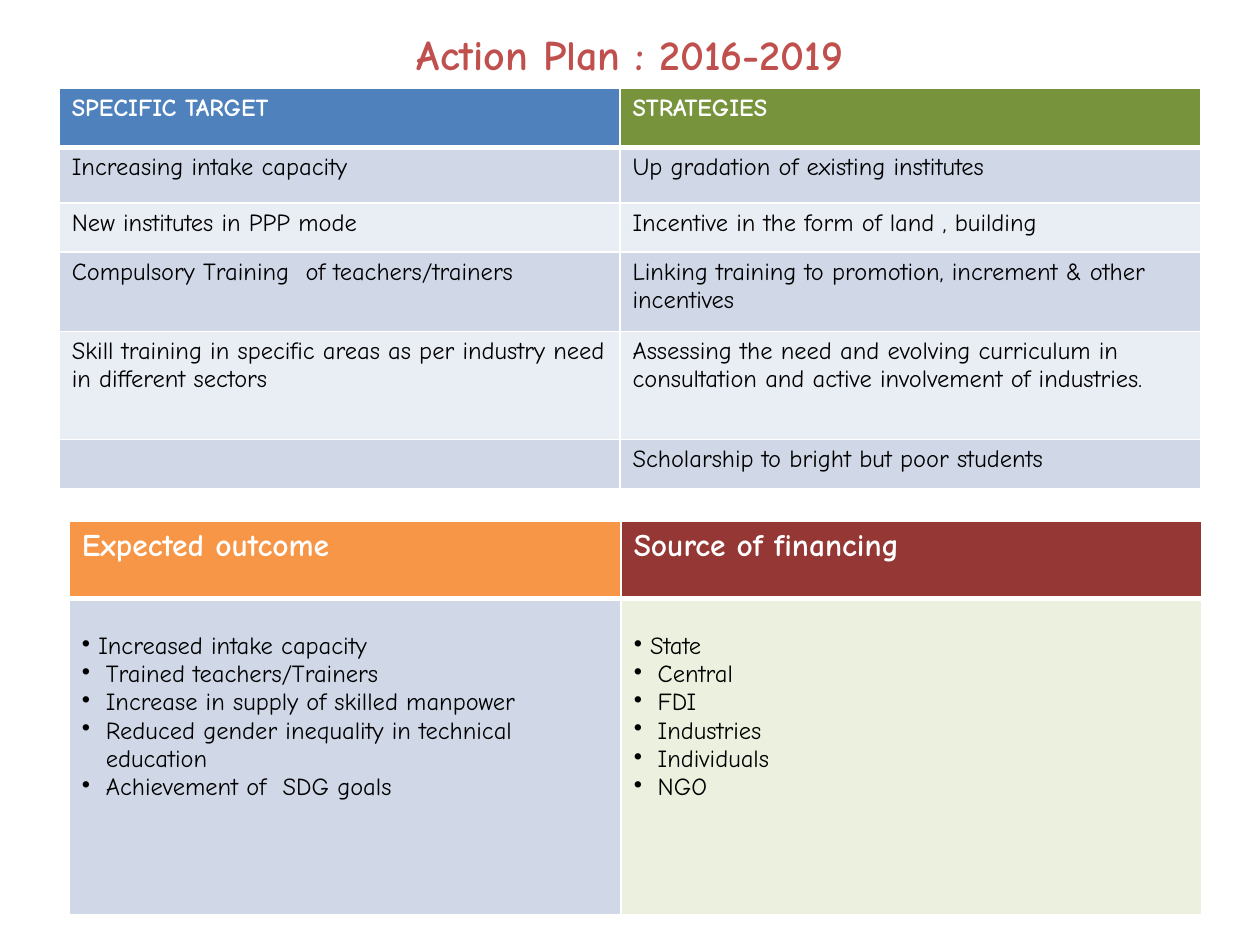
"""Build the Action Plan 2016-2019 slide with its two tables."""
from lxml import etree
from pptx import Presentation
from pptx.dml.color import RGBColor
from pptx.enum.text import MSO_ANCHOR, PP_ALIGN
from pptx.oxml.ns import qn
from pptx.util import Inches, Pt

CENTER = PP_ALIGN.CENTER
MIDDLE = MSO_ANCHOR.MIDDLE
FONT = "Comic Neue"
WHITE = RGBColor(0xFF, 0xFF, 0xFF)
BLACK = RGBColor(0, 0, 0)
RED = RGBColor(0xC0, 0x50, 0x4D)
BLUE = RGBColor(0x4F, 0x81, 0xBD)
GREEN = RGBColor(0x77, 0x93, 0x3C)
ORANGE = RGBColor(0xF7, 0x96, 0x46)
MAROON = RGBColor(0x95, 0x37, 0x35)
BAND_DARK = RGBColor(0xD0, 0xD8, 0xE8)
BAND_LIGHT = RGBColor(0xE9, 0xED, 0xF4)
PALE_GREEN = RGBColor(0xEB, 0xF1, 0xDE)

TITLE = "Action Plan : 2016-2019"
TARGETS = [
    ("SPECIFIC TARGET", "STRATEGIES"),
    ("Increasing intake capacity", "Up gradation of existing institutes"),
    ("New institutes in PPP mode", "Incentive in the form of land , building"),
    ("Compulsory Training  of teachers/trainers",
     "Linking training to promotion, increment & other incentives"),
    ("Skill training in specific areas as per industry need in different sectors",
     "Assessing the need and evolving curriculum in consultation and active "
     "involvement of industries."),
    ("", "Scholarship to bright but poor students"),
]
OUTCOME_HEADERS = ("Expected outcome", "Source of financing")
OUTCOMES = [
    "Increased intake capacity",
    "Trained teachers/Trainers",
    "Increase in supply of skilled manpower",
    "Reduced gender inequality in technical\veducation",
    "Achievement of  SDG goals",
]
SOURCES = ["State", "Central", "FDI", "Industries", "Individuals", "NGO"]


def style(paragraph, size, color, bold):
    font = paragraph.font
    font.name, font.size, font.bold = FONT, Pt(size), bold
    font.color.rgb = color


def add_borders(cell, bottom):
    properties = cell._tc.get_or_add_tcPr()
    widths = {"a:lnL": 1, "a:lnR": 1, "a:lnT": 1, "a:lnB": bottom}
    for position, (tag, width) in enumerate(widths.items()):
        line = etree.Element(qn(tag), w=str(Pt(width)))
        fill = etree.SubElement(line, qn("a:solidFill"))
        etree.SubElement(fill, qn("a:srgbClr"), val=str(WHITE))
        properties.insert(position, line)


def add_bullet(paragraph, indent):
    properties = paragraph._p.get_or_add_pPr()
    properties.set("marL", str(Inches(indent)))
    properties.set("indent", str(-Inches(indent)))
    bullet = etree.Element(qn("a:buChar"), char="•")
    properties.insert_element_before(bullet, "a:tabLst", "a:defRPr", "a:extLst")


def fill_cell(cell, lines, color, size=14, header=False):
    cell.fill.solid()
    cell.fill.fore_color.rgb = color
    add_borders(cell, 3 if header else 1)
    frame = cell.text_frame
    for index, line in enumerate(lines):
        paragraph = frame.add_paragraph() if index else frame.paragraphs[0]
        paragraph.text = line
        style(paragraph, size, WHITE if header else BLACK, header)


def add_table(slide, left, top, widths, heights):
    table = slide.shapes.add_table(
        len(heights), len(widths), Inches(left), Inches(top),
        Inches(sum(widths)), Inches(sum(heights))).table
    for column, width in zip(table.columns, widths):
        column.width = Inches(width)
    for row, height in zip(table.rows, heights):
        row.height = Inches(height)
    return table


def add_title(slide):
    title = slide.shapes.title
    title.left, title.top = Inches(0.5), Inches(0)
    title.width, title.height = Inches(9), Inches(1.55)
    frame = title.text_frame
    frame.text = TITLE
    frame.vertical_anchor = MIDDLE
    frame.margin_bottom = Inches(0.74)
    frame.paragraphs[0].alignment = CENTER
    style(frame.paragraphs[0], 24, RED, True)


def add_targets(slide):
    table = add_table(slide, 0.47, 0.7, (4.45, 4.61),
                      (0.47, 0.44, 0.39, 0.63, 0.86, 0.39))
    for row, texts in enumerate(TARGETS):
        band = BAND_DARK if row % 2 else BAND_LIGHT
        colors = (band, band) if row else (BLUE, GREEN)
        for column, text in enumerate(texts):
            fill_cell(table.cell(row, column), [text], colors[column], header=row == 0)


def add_outcomes(slide):
    table = add_table(slide, 0.55, 4.14, (4.38, 4.61), (0.61, 2.51))
    columns = zip(OUTCOME_HEADERS, (ORANGE, MAROON),
                  (OUTCOMES, SOURCES), (BAND_DARK, PALE_GREEN))
    for column, (header, header_color, items, color) in enumerate(columns):
        fill_cell(table.cell(0, column), [header], header_color, 18, True)
        body = table.cell(1, column)
        fill_cell(body, items, color)
        body.margin_top = Inches(0.27)
        for index, paragraph in enumerate(body.text_frame.paragraphs):
            add_bullet(paragraph, 0.19 if index else 0.13)


def main():
    presentation = Presentation()
    presentation.slide_width, presentation.slide_height = Inches(10), Inches(7.5)
    slide = presentation.slides.add_slide(presentation.slide_layouts[5])
    add_title(slide)
    add_targets(slide)
    add_outcomes(slide)
    presentation.save("out.pptx")


if __name__ == "__main__":
    main()
